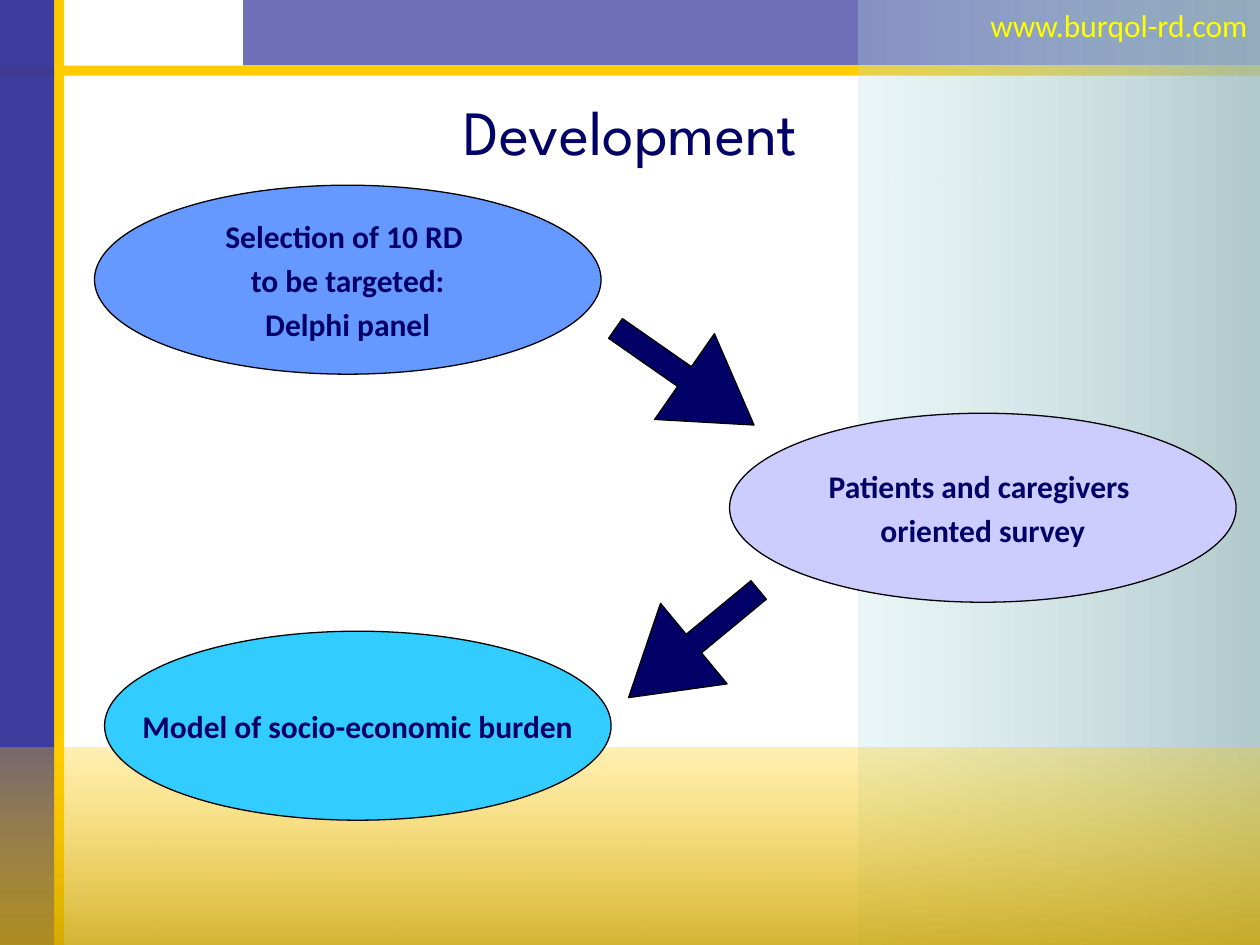
from lxml.etree import SubElement
from pptx import Presentation
from pptx.dml.color import RGBColor
from pptx.enum.shapes import MSO_SHAPE as Shape
from pptx.enum.text import MSO_ANCHOR as Anchor, MSO_AUTO_SIZE as AutoSize, PP_ALIGN as Align
from pptx.oxml.ns import qn
from pptx.util import Inches, Pt

NAVY, INDIGO, GOLD, TEAL = "000066", "333399", "FFCC00", "BBE0E3"


def rgb(value):
    return RGBColor.from_string(value)


def adjust_colour(colour, **percents):
    """Add modifiers such as shade or alpha to a colour element."""
    for modifier, percent in percents.items():
        SubElement(colour, qn(f"a:{modifier}")).set("val", str(percent * 1000))


def write(frame, text, size=18, font="Calibri", colour=NAVY, bold=False,
          align=Align.CENTER, anchor=Anchor.MIDDLE, wrap=True, gap=0, hanging=0):
    frame.word_wrap = wrap
    frame.vertical_anchor = anchor
    frame.text = text
    for number, paragraph in enumerate(frame.paragraphs):
        paragraph.alignment = align
        if number:
            paragraph.space_before = Pt(gap)
        if hanging:
            properties = paragraph._p.get_or_add_pPr()
            properties.set("marL", str(Inches(hanging)))
            properties.set("indent", str(-Inches(hanging)))
        style = paragraph.runs[0].font
        style.size, style.name, style.bold = Pt(size), font, bold
        style.color.rgb = rgb(colour)


def add_figure(slide, kind, box, colour, outline=True):
    figure = slide.shapes.add_shape(kind, *map(Inches, box))
    figure.shadow.inherit = False
    figure.fill.solid()
    figure.fill.fore_color.rgb = rgb(colour)
    if outline:
        figure.line.color.rgb = rgb("000000")
        figure.line.width = Pt(0.75)
    else:
        figure.line.fill.background()
    return figure


def add_band(slide, box, colour, alpha=100):
    band = add_figure(slide, Shape.RECTANGLE, box, colour, outline=False)
    if alpha < 100:
        adjust_colour(next(band._element.iter(qn("a:srgbClr"))), alpha=alpha)


def add_fading_band(slide, box, colour, shade, angle):
    """Band that runs from a faint colour to a denser, darker one."""
    band = add_figure(slide, Shape.RECTANGLE, box, colour, outline=False)
    band.fill.gradient()
    band.fill.gradient_angle = angle
    for stop, position in zip(band.fill.gradient_stops, (0, 1)):
        stop.position = position
        stop.color.rgb = rgb(colour)
    faint, dense = band._element.iter(qn("a:srgbClr"))
    adjust_colour(faint, alpha=30)
    adjust_colour(dense, shade=shade, alpha=80)


def add_stage(slide, left, top, colour, text):
    stage = add_figure(slide, Shape.OVAL, (left, top, 4.02, 1.5), colour)
    write(stage.text_frame, text, bold=True, wrap=False, gap=3.6, hanging=0.38)


def add_step_arrow(slide, left, top, rotation):
    arrow = add_figure(slide, Shape.DOWN_ARROW, (left, top, 0.83, 1.34), NAVY)
    arrow.adjustments[0], arrow.adjustments[1] = 0.23, 0.81
    arrow.rotation = rotation


def add_frame(slide):
    add_band(slide, (1.93, 0, 8.07, 0.52), INDIGO, alpha=70)
    add_band(slide, (0.43, 0, 0.08, 7.5), GOLD)
    add_band(slide, (0, 0.52, 10, 0.08), GOLD)
    add_fading_band(slide, (6.81, 0, 3.19, 7.5), TEAL, shade=67, angle=0)
    add_band(slide, (0, 0, 0.43, 7.5), INDIGO, alpha=95)
    add_fading_band(slide, (0, 5.93, 10, 1.57), GOLD, shade=60, angle=270)


def add_title(slide, text):
    title = slide.shapes.title
    title.left, title.top, title.width, title.height = map(Inches, (0.51, 0.52, 8.99, 1.03))
    write(title.text_frame, text, size=36, font="League Spartan")
    # Bring the title in front of the coloured bands
    slide.shapes._spTree.append(title._element)


def add_web_address(slide, text):
    address = slide.shapes.add_textbox(*map(Inches, (7.3, 0, 2.7, 0.4)))
    write(address.text_frame, text, colour="FFFF00", align=Align.RIGHT, anchor=Anchor.TOP)
    address.text_frame.auto_size = AutoSize.SHAPE_TO_FIT_TEXT


def main():
    deck = Presentation()
    deck.slide_width, deck.slide_height = Inches(10), Inches(7.5)
    slide = deck.slides.add_slide(deck.slide_layouts[5])

    # Background bands and headings
    add_frame(slide)
    add_title(slide, "Development")
    add_web_address(slide, "www.burqol-rd.com")

    # Three stages joined by two arrows
    add_step_arrow(slide, 5.02, 2.32, rotation=304.9)
    add_stage(slide, 0.75, 1.47, "6699FF",
              "Selection of 10 RD \nto be targeted:\nDelphi panel")
    add_stage(slide, 5.79, 3.28, "CCCCFF", "Patients and caregivers \noriented survey")
    add_stage(slide, 0.83, 5.01, "33CCFF", "Model of socio-economic burden")
    add_step_arrow(slide, 5.09, 4.44, rotation=50.4)

    deck.save("out.pptx")


if __name__ == "__main__":
    main()
